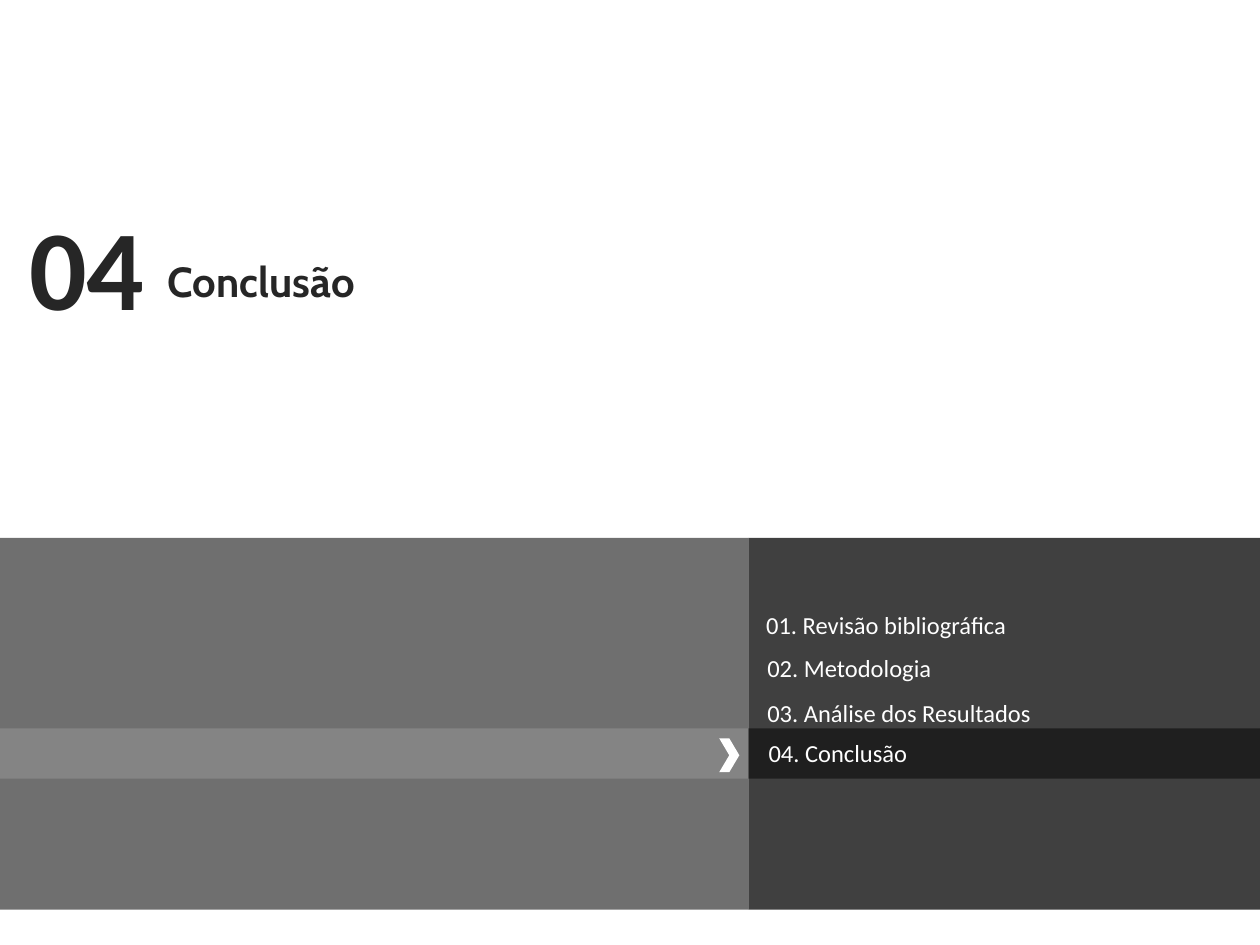
from lxml import etree
from pptx import Presentation
from pptx.dml.color import RGBColor
from pptx.enum import shapes, text
from pptx.oxml.ns import qn
from pptx.util import Pt

WIDTH, HEIGHT = 720, 540
SPLIT = 427.7
BAND_TOP, BAND_HEIGHT = 307.4, 212.4
ACTIVE_TOP, ACTIVE_HEIGHT = 416.2, 28.8
AGENDA = [
    ("01. Revisão bibliográfica", 437.8, 348.5),
    ("02. Metodologia", 438.5, 373),
    ("03. Análise dos Resultados", 438.5, 398.9),
    ("04. Conclusão", 439.2, 421.9),
]


def color(value):
    return RGBColor.from_string(value)


def add_block(s, box, fill, alpha=100, kind=shapes.MSO_SHAPE.RECTANGLE):
    """Add a borderless shape; alpha is its opacity in percent."""
    sp = s.shapes.add_shape(kind, *map(Pt, box))
    sp.shadow.inherit = False
    sp.line.fill.background()
    sp.fill.solid()
    sp.fill.fore_color.rgb = color(fill)
    if alpha < 100:
        clr = sp.fill._xPr.find(qn("a:solidFill"))[0]
        etree.SubElement(clr, qn("a:alpha")).set("val", str(alpha * 1000))


def write_text(sp, content, size, font, fill, bold=False):
    tf = sp.text_frame
    frame_format = {
        "margin_left": 0, "margin_top": 0, "margin_right": 0, "margin_bottom": 0,
        "word_wrap": True, "auto_size": text.MSO_AUTO_SIZE.NONE,
        "vertical_anchor": text.MSO_ANCHOR.TOP,
    }
    for name, value in frame_format.items():
        setattr(tf, name, value)
    p = tf.paragraphs[0]
    p.alignment = text.PP_ALIGN.LEFT
    r = p.add_run()
    r.text = content
    for name, value in {"size": Pt(size), "name": font, "bold": bold}.items():
        setattr(r.font, name, value)
    r.font.color.rgb = color(fill)


def add_label(s, box, content, size, fill, bold=False):
    sp = s.shapes.add_textbox(*map(Pt, box))
    write_text(sp, content, size, "Calibri", fill, bold)


def set_title(s, box, content):
    sp = s.shapes.title
    sp.left, sp.top, sp.width, sp.height = map(Pt, box)
    write_text(sp, content, 24, "Cabin", "262626", True)


def main():
    prs = Presentation()
    prs.slide_width, prs.slide_height = Pt(WIDTH), Pt(HEIGHT)
    s = prs.slides.add_slide(prs.slide_layouts[5])

    right = WIDTH - SPLIT
    add_block(s, (0, BAND_TOP, SPLIT, BAND_HEIGHT), "404040", 75)
    add_block(s, (SPLIT, BAND_TOP, right, BAND_HEIGHT), "404040")
    add_block(s, (SPLIT, ACTIVE_TOP, right, ACTIVE_HEIGHT), "000000", 50)
    add_block(s, (0, ACTIVE_TOP, SPLIT, ACTIVE_HEIGHT), "FFFFFF", 15)
    add_block(s, (411, 421.9, 11.5, 19.4), "FFFFFF",
              kind=shapes.MSO_SHAPE.CHEVRON)

    for content, left, top in AGENDA:
        add_label(s, (left, top, 236, 17.3), content, 14, "FFFFFF")
    add_label(s, (16.6, 112.3, 80, 67.7), "04", 65, "262626", True)
    set_title(s, (95.8, 146.2, 594.7, 33.8), "Conclusão")
    prs.save("out.pptx")


if __name__ == "__main__":
    main()
